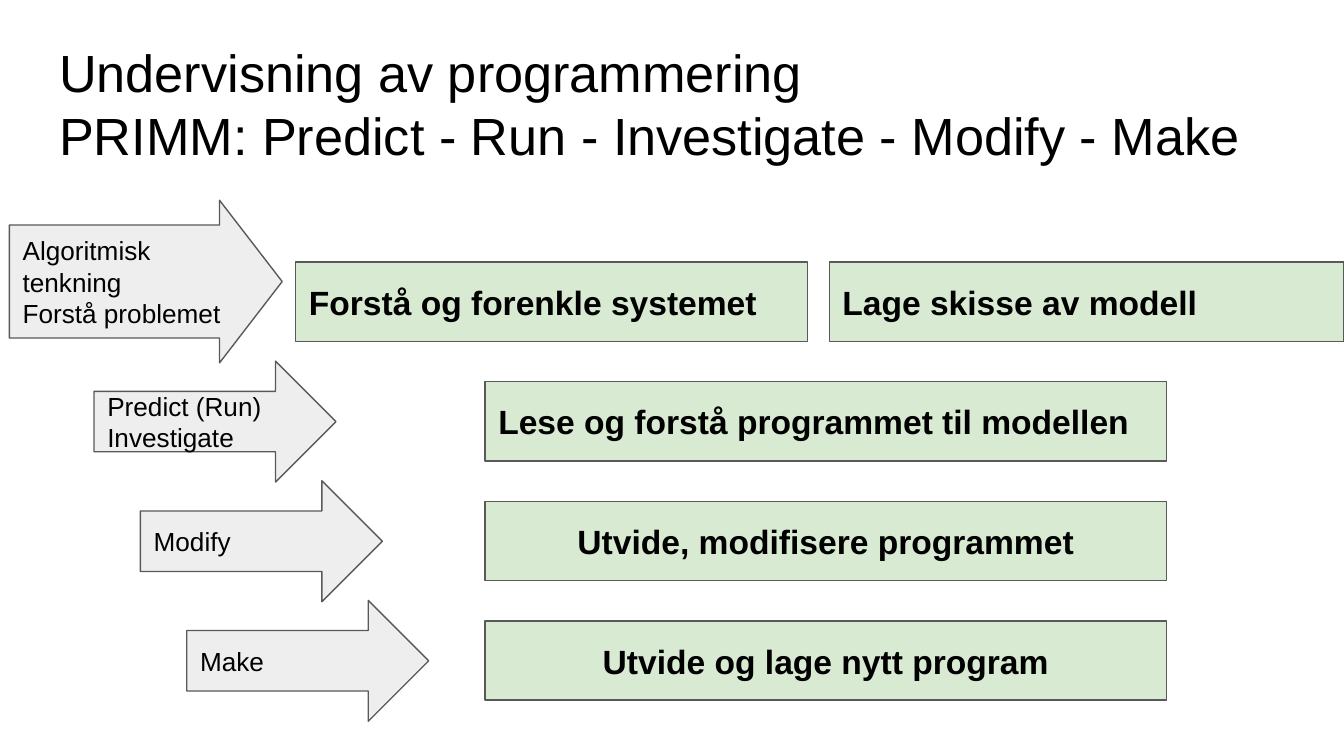
from dataclasses import dataclass

from pptx import Presentation
from pptx.dml.color import RGBColor
from pptx.enum.shapes import MSO_SHAPE
from pptx.enum.text import MSO_ANCHOR, MSO_AUTO_SIZE, PP_ALIGN
from pptx.util import Pt

RECT, ARROW = MSO_SHAPE.RECTANGLE, MSO_SHAPE.RIGHT_ARROW
LEFT, CENTER = PP_ALIGN.LEFT, PP_ALIGN.CENTER
TOP, MIDDLE = MSO_ANCHOR.TOP, MSO_ANCHOR.MIDDLE
NO_AUTOSIZE = MSO_AUTO_SIZE.NONE

BLACK = RGBColor(0x00, 0x00, 0x00)
GREEN = RGBColor(0xD9, 0xEA, 0xD3)
GRAY = RGBColor(0xEE, 0xEE, 0xEE)
OUTLINE = RGBColor(0x59, 0x59, 0x59)

FONT = "Arial"
INSET = 7.2
ROW_STEP = 64.08
BOX_TOP, BOX_HEIGHT = 140.4, 42.48
STAGE_LEFT, STAGE_WIDTH = 259.92, 365.04
ARROW_LEFT, ARROW_TOP, ARROW_STEP = 50.4, 193.5, 24.84
ARROW_WIDTH, ARROW_HEIGHT = 129.6, 64.8


@dataclass
class Box:
    text: str
    left: float
    width: float
    row: int
    align: PP_ALIGN = LEFT


@dataclass
class Arrow:
    text: str
    left: float
    top: float
    width: float = ARROW_WIDTH
    height: float = ARROW_HEIGHT
    shaft: float = 0.5
    head: float = 0.5


def place(sp, left: float, top: float, width: float, height: float) -> None:
    sp.left, sp.top = Pt(left), Pt(top)
    sp.width, sp.height = Pt(width), Pt(height)


def write(sp, text: str, size: int, bold: bool, align: PP_ALIGN, anchor: MSO_ANCHOR) -> None:
    tf = sp.text_frame
    tf.text = text
    tf.word_wrap = True
    tf.auto_size = NO_AUTOSIZE
    tf.vertical_anchor = anchor
    tf.margin_left = tf.margin_right = tf.margin_top = tf.margin_bottom = Pt(INSET)
    for p in tf.paragraphs:
        p.alignment = align
        for r in p.runs:
            r.font.name = FONT
            r.font.size = Pt(size)
            r.font.bold = bold
            r.font.color.rgb = BLACK


def add_outlined(slide, kind: MSO_SHAPE, fill: RGBColor):
    sp = slide.shapes.add_shape(kind, 0, 0, 0, 0)
    sp.shadow.inherit = False
    sp.fill.solid()
    sp.fill.fore_color.rgb = fill
    sp.line.color.rgb = OUTLINE
    sp.line.width = Pt(0.75)
    return sp


def draw_box(slide, box: Box) -> None:
    sp = add_outlined(slide, RECT, GREEN)
    place(sp, box.left, BOX_TOP + box.row * ROW_STEP, box.width, BOX_HEIGHT)
    write(sp, box.text, 18, True, box.align, MIDDLE)


def draw_arrow(slide, arrow: Arrow) -> None:
    sp = add_outlined(slide, ARROW, GRAY)
    place(sp, arrow.left, arrow.top, arrow.width, arrow.height)
    sp.adjustments[0] = arrow.shaft
    sp.adjustments[1] = arrow.head
    write(sp, arrow.text, 14, False, LEFT, MIDDLE)


BOXES = [
    Box("Forstå og forenkle systemet", 158.4, 274.32, 0),
    Box("Lage skisse av modell", 444.24, 275.76, 0),
    Box("Lese og forstå programmet til modellen", STAGE_LEFT, STAGE_WIDTH, 1),
    Box("Utvide, modifisere programmet", STAGE_LEFT, STAGE_WIDTH, 2, CENTER),
    Box("Utvide og lage nytt program", STAGE_LEFT, STAGE_WIDTH, 3, CENTER),
]
STAGES = ["Predict (Run) Investigate", "Modify", "Make"]
ARROWS = [
    Arrow("Algoritmisk tenkning\nForstå problemet", 5.04, 107.28, 146.16, 87.12, 0.695, 0.385)
] + [
    Arrow(text, ARROW_LEFT + i * ARROW_STEP, ARROW_TOP + i * ROW_STEP)
    for i, text in enumerate(STAGES)
]


def main() -> None:
    prs = Presentation()
    prs.slide_width, prs.slide_height = Pt(720), Pt(405)
    slide = prs.slides.add_slide(prs.slide_layouts[5])

    title = slide.shapes.title
    place(title, 24.48, 14.4, 671.04, 92.88)
    heading = "Undervisning av programmering\nPRIMM: Predict - Run - Investigate - Modify - Make"
    write(title, heading, 28, False, LEFT, TOP)

    for box in BOXES:
        draw_box(slide, box)
    for arrow in ARROWS:
        draw_arrow(slide, arrow)
    prs.save("out.pptx")


if __name__ == "__main__":
    main()
